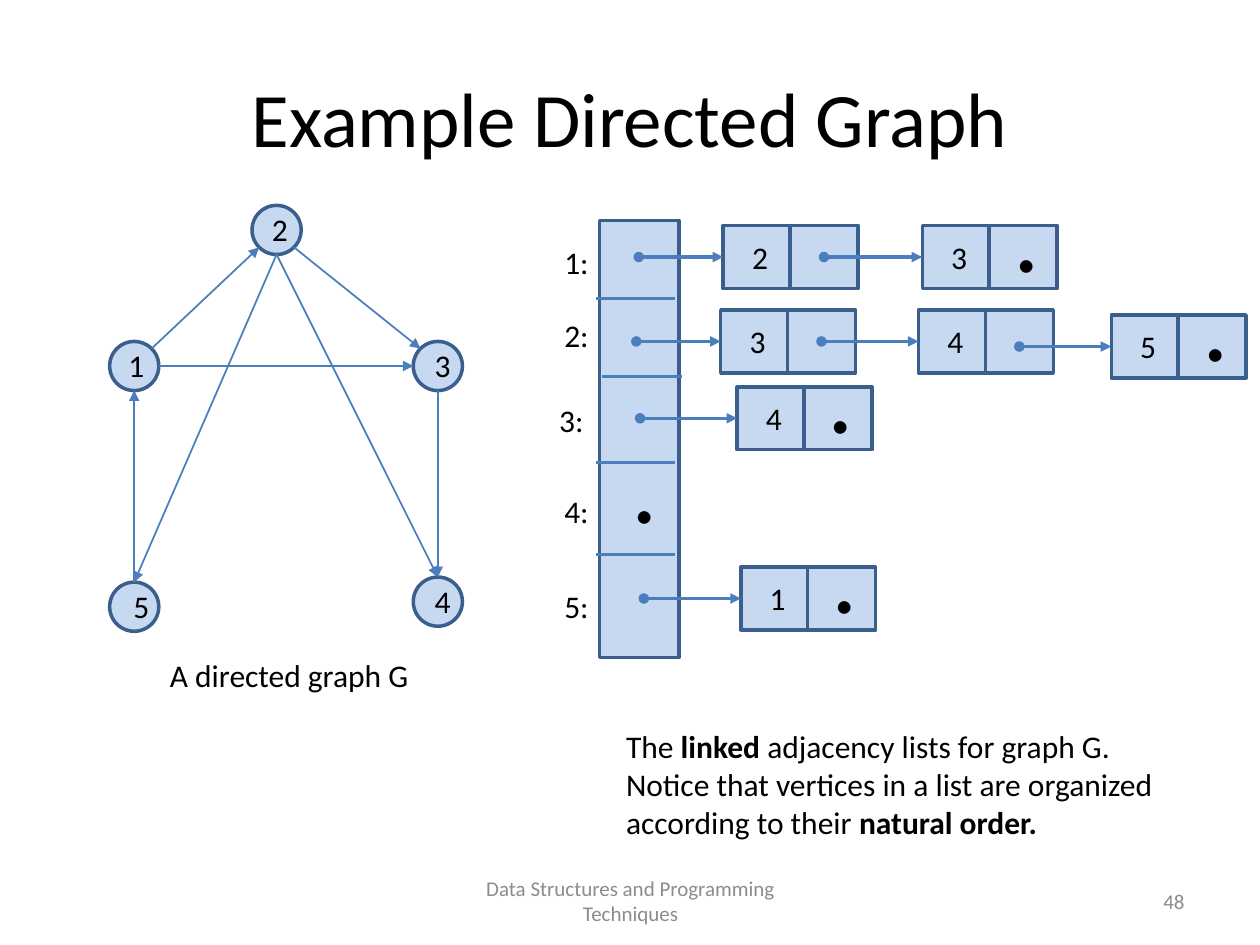
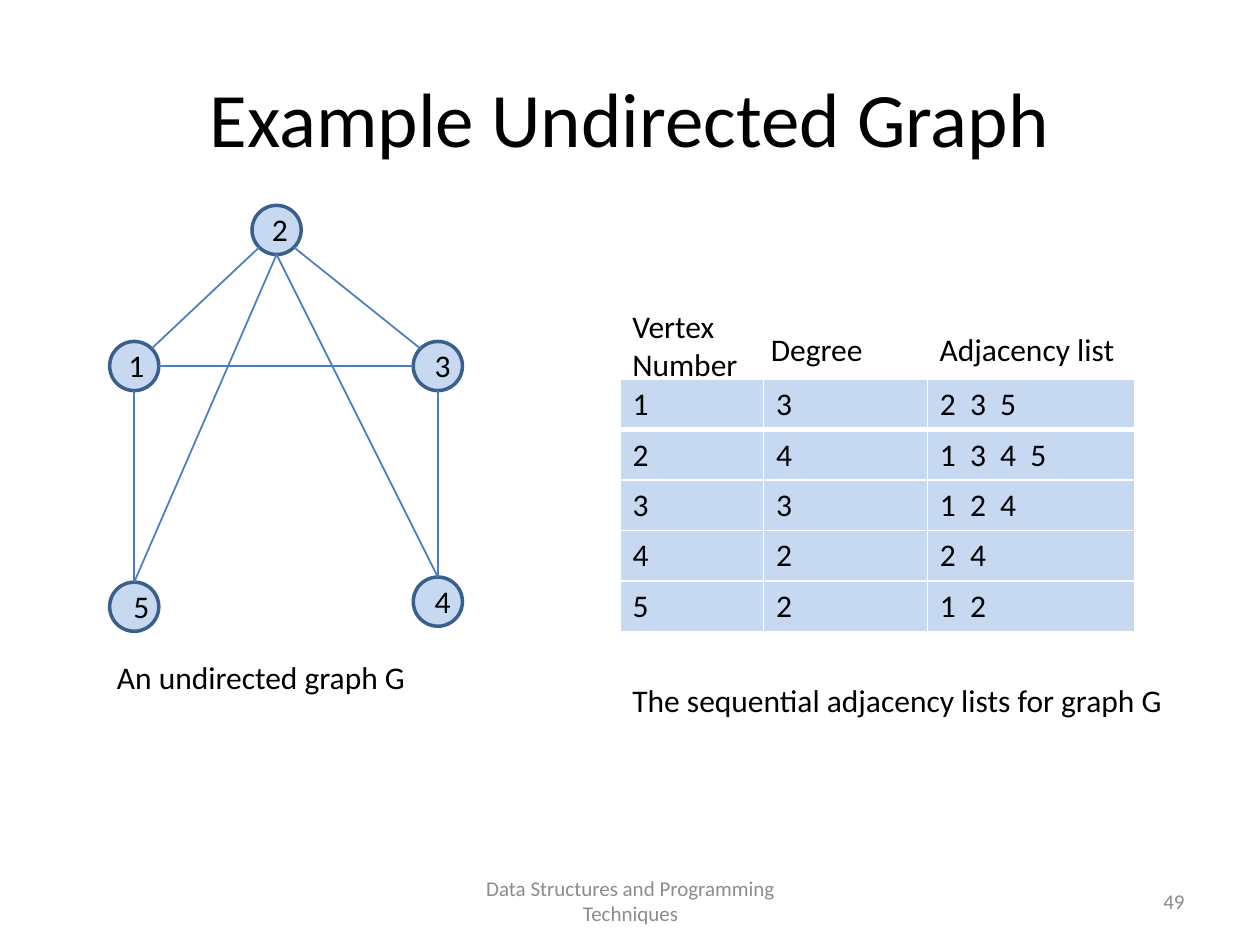
from math import hypot

from lxml.etree import SubElement
from pptx import Presentation
from pptx.dml.color import RGBColor
from pptx.enum.shapes import MSO_CONNECTOR, MSO_SHAPE
from pptx.enum.text import MSO_ANCHOR, PP_ALIGN
from pptx.oxml.ns import qn
from pptx.util import Inches, Pt

FONT = "Calibri"
BLACK, GREY, WHITE = "000000", "8C8C8C", "FFFFFF"
FILL, OUTLINE, LINK = "C6D9F1", "3A5F8C", "4B7EBC"
FOOTER = "Data Structures and Programming Techniques"

DIAMETER = 0.39
# vertex: (left, top of circle, offset of its label from the left)
VERTICES = {
    1: (0.87, 2.71, 0.05),
    2: (2.0, 1.63, 0.06),
    3: (3.28, 2.71, 0.07),
    4: (3.28, 4.58, 0.07),
    5: (0.87, 4.62, 0.09),
}
UP, DOWN, LEFT, RIGHT = (0, -1), (0, 1), (-1, 0), (1, 0)
# from vertex, side it leaves, to vertex, side it enters
EDGES = [
    (1, (1, -1), 2, (-1, 1)),
    (2, (1, 1), 3, (-1, -1)),
    (1, RIGHT, 3, LEFT),
    (2, DOWN, 5, UP),
    (2, DOWN, 4, UP),
    (5, UP, 1, DOWN),
    (3, DOWN, 4, UP),
]

CELL_W, CELL_H, CELL_PITCH = 0.54, 0.5, 0.53
# x of the first pointer, then (vertex, left, top) of each list node
LINKED_LISTS = [
    (5.07, [(2, 5.74, 1.79), (3, 7.32, 1.79)]),
    (5.05, [(3, 5.72, 2.46), (4, 7.29, 2.46), (5, 8.82, 2.5)]),
    (5.08, [(4, 5.85, 3.07)]),
    (5.11, [(1, 5.88, 4.5)]),
]
HEAD_LABEL_TOPS = [1.88, 2.46, 3.13, 3.86, 4.61]
HEAD_DIVIDERS = [(4.73, 2.37), (4.78, 2.99), (4.73, 3.67), (4.73, 4.4)]

ADJACENCY = {1: "235", 2: "1345", 3: "124", 4: "24", 5: "12"}
TABLE_HEADINGS = [
    ("Vertex Number", (4.92, 2.39, 1.1, 0.71)),
    ("Degree", (6.02, 2.57, 1.9, 0.4)),
    ("Adjacency list", (7.36, 2.57, 1.9, 0.4)),
]


def rgb(color):
    return RGBColor.from_string(color)


def inches(values):
    return [Inches(v) for v in values]


def write(tf, text, size=18, color=BLACK, align=PP_ALIGN.LEFT, anchor=MSO_ANCHOR.TOP):
    """Fill a text frame; text is a string or a list of (string, bold) runs."""
    tf.word_wrap = True
    tf.vertical_anchor = anchor
    p = tf.paragraphs[0]
    p.alignment = align
    for part, bold in [(text, False)] if isinstance(text, str) else text:
        r = p.add_run()
        r.text = part
        r.font.name, r.font.size, r.font.bold = FONT, Pt(size), bold
        r.font.color.rgb = rgb(color)


def add_text(s, text, box, **style):
    write(s.shapes.add_textbox(*inches(box)).text_frame, text, **style)


def add_digit(s, text, left, top):
    add_text(s, str(text), (left, top, 0.28, 0.4), align=PP_ALIGN.CENTER)


def add_null_dot(s, left, top):
    add_text(s, ".", (left, top, 0.65, 1.11), size=60, align=PP_ALIGN.CENTER)


def add_box(s, kind, box):
    sp = s.shapes.add_shape(kind, *inches(box))
    sp.shadow.inherit = False
    sp.fill.solid()
    sp.fill.fore_color.rgb = rgb(FILL)
    sp.line.color.rgb = rgb(OUTLINE)
    sp.line.width = Pt(2)
    return sp


def add_line(s, start, end, width, head=None, tail=None):
    c = s.shapes.add_connector(MSO_CONNECTOR.STRAIGHT, *inches((*start, *end)))
    c.line.color.rgb = rgb(LINK)
    c.line.width = Pt(width)
    sp_pr = c._element.spPr
    for tag, arrow in (("a:headEnd", head), ("a:tailEnd", tail)):
        if arrow:
            SubElement(sp_pr.find(qn("a:ln")), qn(tag), type=arrow)
    SubElement(sp_pr, qn("a:effectLst"))
    return c


def rim_point(vertex, side):
    """Point on a vertex circle in the direction of side."""
    left, top, _ = VERTICES[vertex]
    radius = DIAMETER / 2
    dx, dy = side
    reach = radius / hypot(dx, dy)
    return left + radius + dx * reach, top + radius + dy * reach


def add_graph(s, directed):
    for left, top, _ in VERTICES.values():
        add_box(s, MSO_SHAPE.OVAL, (left, top, DIAMETER, DIAMETER))
    for source, leave, target, enter in EDGES:
        add_line(s, rim_point(source, leave), rim_point(target, enter), 1,
                 tail="triangle" if directed else None)
    for vertex, (left, top, offset) in VERTICES.items():
        add_digit(s, vertex, left + offset, top - 0.01)


def add_linked_list(s, pointer_x, nodes):
    for vertex, left, top in nodes:
        cell = add_box(s, MSO_SHAPE.RECTANGLE, (left, top, CELL_W, CELL_H))
        pointer_left = left + CELL_PITCH
        add_box(s, MSO_SHAPE.RECTANGLE, (pointer_left, top, CELL_W, CELL_H))
        add_digit(s, vertex, left + 0.13, top + 0.05)
        middle = top + CELL_H / 2
        c = add_line(s, (pointer_x, middle), (left, middle), 2, "oval", "triangle")
        c.end_connect(cell, 1)
        pointer_x = pointer_left + CELL_W / 2
    add_null_dot(s, pointer_left - 0.03, top - 0.51)


def add_list_heads(s):
    add_box(s, MSO_SHAPE.RECTANGLE, (4.76, 1.75, 0.63, 3.47))
    for left, y in HEAD_DIVIDERS:
        add_line(s, (left, y), (left + 0.63, y), 2)
    for vertex, top in enumerate(HEAD_LABEL_TOPS, 1):
        left = 4.26 if vertex == 3 else 4.3
        add_text(s, f"{vertex}:", (left, top, 0.55, 0.4), align=PP_ALIGN.CENTER)
    add_null_dot(s, 4.79, 3.27)


def set_borders(cell, **widths):
    tc_pr = cell._tc.get_or_add_tcPr()
    for i, side in enumerate(("lnL", "lnR", "lnT", "lnB")):
        ln = SubElement(tc_pr, qn(f"a:{side}"), w=str(Pt(widths.get(side, 1))))
        fill = SubElement(ln, qn("a:solidFill"))
        SubElement(fill, qn("a:srgbClr"), val=WHITE)
        tc_pr.insert(i, ln)


def add_adjacency_table(s):
    frame = s.shapes.add_table(len(ADJACENCY), 3, *inches((4.92, 3.01, 4.09, 2)))
    table = frame.table
    table.first_row = table.horz_banding = False
    for column, width in zip(table.columns, (1.14, 1.3, 1.65)):
        column.width = Inches(width)
    for row, (vertex, neighbours) in enumerate(ADJACENCY.items()):
        values = (str(vertex), str(len(neighbours)), "  ".join(neighbours))
        for col, value in enumerate(values):
            cell = table.cell(row, col)
            write(cell.text_frame, value)
            cell.fill.solid()
            cell.fill.fore_color.rgb = rgb(FILL)
            set_borders(cell, lnB=3 if row == 0 else 1, lnT=3 if row == 1 else 1)
    for heading, box in TABLE_HEADINGS:
        add_text(s, heading, box)


def new_slide(prs, title, number):
    s = prs.slides.add_slide(prs.slide_layouts[5])
    t = s.shapes.title
    t.left, t.top, t.width, t.height = inches((0.5, 0.3, 9, 1.25))
    write(t.text_frame, title, size=44, align=PP_ALIGN.CENTER, anchor=MSO_ANCHOR.MIDDLE)
    for text, box, align in (
        (FOOTER, (3.42, 6.95, 3.17, 0.4), PP_ALIGN.CENTER),
        (str(number), (7.17, 6.95, 2.33, 0.4), PP_ALIGN.RIGHT),
    ):
        add_text(s, text, box, size=12, color=GREY, align=align, anchor=MSO_ANCHOR.MIDDLE)
    return s


def directed_slide(prs):
    s = new_slide(prs, "Example Directed Graph", 48)
    add_graph(s, directed=True)
    add_text(s, "A directed graph G", (1.25, 5.16, 2.81, 0.4))
    add_list_heads(s)
    for pointer_x, nodes in LINKED_LISTS:
        add_linked_list(s, pointer_x, nodes)
    add_text(s, [
        ("The ", False),
        ("linked", True),
        (" adjacency lists for graph G. Notice that vertices in a list are "
         "organized according to their ", False),
        ("natural order.", True),
    ], (4.87, 5.72, 4.49, 1.01))


def undirected_slide(prs):
    s = new_slide(prs, "Example Undirected Graph", 49)
    add_graph(s, directed=False)
    add_text(s, "An undirected graph G", (0.83, 5.17, 2.89, 0.4))
    add_adjacency_table(s)
    add_text(s, "The sequential adjacency lists for graph G", (4.92, 5.36, 4.49, 0.4))


def main():
    prs = Presentation()
    prs.slide_width, prs.slide_height = Inches(10), Inches(7.5)
    directed_slide(prs)
    undirected_slide(prs)
    prs.save("out.pptx")


if __name__ == "__main__":
    main()
